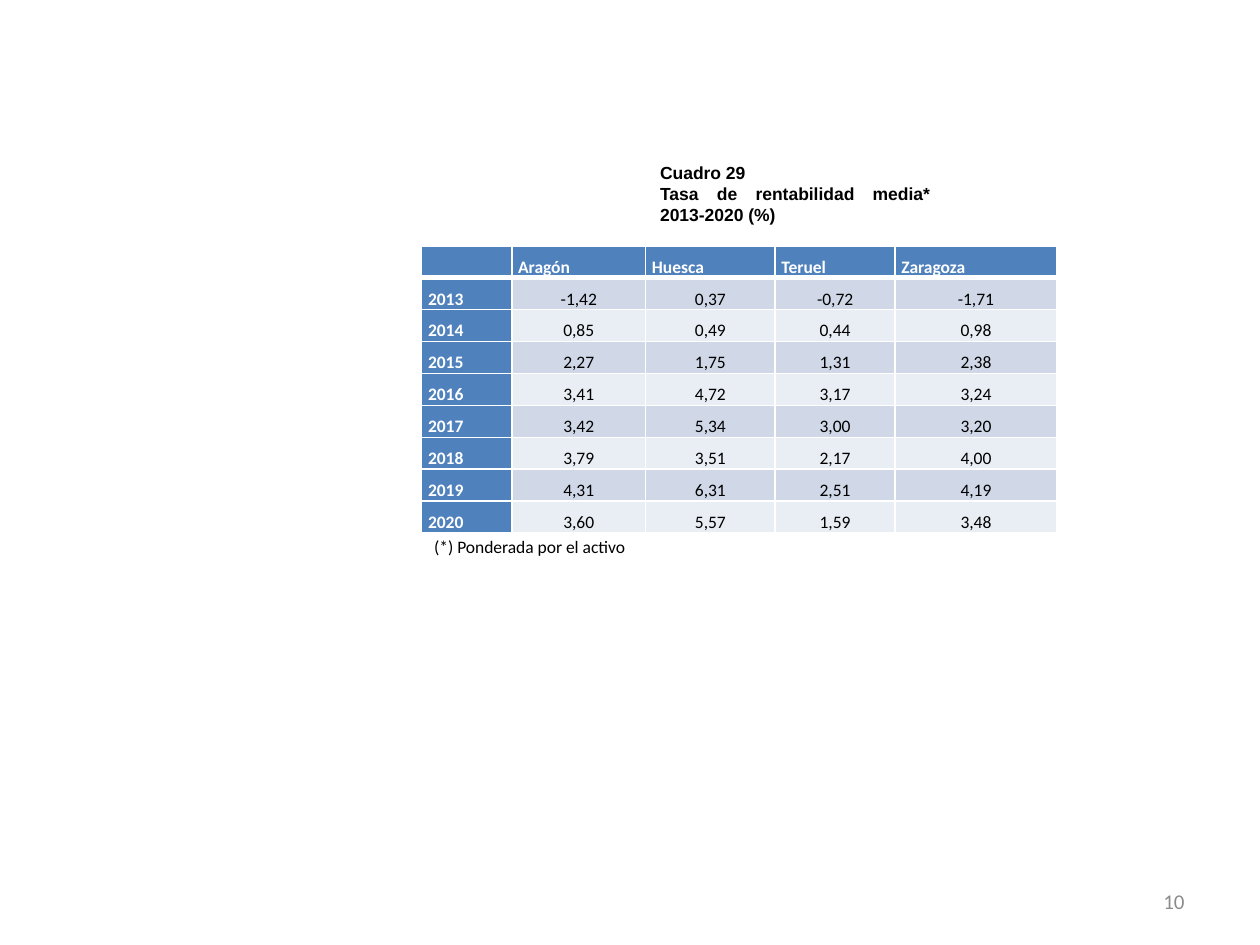
from lxml.etree import SubElement
from pptx import Presentation
from pptx.dml.color import RGBColor
from pptx.enum.text import MSO_ANCHOR, PP_ALIGN
from pptx.oxml.ns import qn
from pptx.util import Pt

HEADERS = ["", "Aragón", "Huesca", "Teruel", "Zaragoza"]
RATES = [
    ["2013", "-1,42", "0,37", "-0,72", "-1,71"],
    ["2014", "0,85", "0,49", "0,44", "0,98"],
    ["2015", "2,27", "1,75", "1,31", "2,38"],
    ["2016", "3,41", "4,72", "3,17", "3,24"],
    ["2017", "3,42", "5,34", "3,00", "3,20"],
    ["2018", "3,79", "3,51", "2,17", "4,00"],
    ["2019", "4,31", "6,31", "2,51", "4,19"],
    ["2020", "3,60", "5,57", "1,59", "3,48"],
]
COLUMN_WIDTHS = [51.5, 76.5, 74, 68.5, 92.5]
ROW_HEIGHT = 18


def rgb(color):
    return RGBColor.from_string(color)


class SlideBuilder:
    """Holds the style and the current slide, and adds each kind of element."""

    FONT = "Calibri"
    TITLE_FONT = "Arial"
    SIZE = 10
    TEXT = "000000"
    MUTED = "8C8C8C"
    WHITE = "FFFFFF"
    HEAD = "4F81BD"
    BANDS = ["D0D8E8", "E9EDF4"]

    def __init__(self, prs):
        self.slide = prs.slides.add_slide(prs.slide_layouts[5])

    def format(self, p, align, color=TEXT, size=SIZE, bold=False, font=FONT):
        p.alignment = align
        for r in p.runs:
            r.font.name = font
            r.font.size = Pt(size)
            r.font.bold = bold
            r.font.color.rgb = rgb(color)

    def title(self, text, left, top, width, height, first_indent):
        sp = self.slide.shapes.title
        sp.left, sp.top, sp.width, sp.height = map(Pt, (left, top, width, height))
        tf = sp.text_frame
        tf.text = text
        tf.vertical_anchor = MSO_ANCHOR.MIDDLE
        for p in tf.paragraphs:
            self.format(p, PP_ALIGN.JUSTIFY, bold=True, font=self.TITLE_FONT)
        pPr = tf.paragraphs[0]._p.get_or_add_pPr()
        pPr.set("marL", str(Pt(first_indent)))
        pPr.set("indent", "0")

    def text(self, text, left, top, width, height, align=PP_ALIGN.JUSTIFY,
             anchor=MSO_ANCHOR.TOP, wrap=True, **style):
        sp = self.slide.shapes.add_textbox(*map(Pt, (left, top, width, height)))
        tf = sp.text_frame
        tf.text = text
        tf.word_wrap = wrap
        tf.vertical_anchor = anchor
        self.format(tf.paragraphs[0], align, **style)

    def borders(self, cell, widths):
        tcPr = cell._tc.get_or_add_tcPr()
        for side, width in widths.items():
            ln = SubElement(tcPr, qn(f"a:ln{side}"), w=str(Pt(width)))
            fill = SubElement(ln, qn("a:solidFill"))
            SubElement(fill, qn("a:srgbClr"), val=self.WHITE)

    def cell(self, cell, text, row, col):
        head = row == 0 or col == 0
        cell.margin_left = cell.margin_right = Pt(3.6)
        cell.margin_top = cell.margin_bottom = 0
        cell.vertical_anchor = MSO_ANCHOR.BOTTOM if head else MSO_ANCHOR.MIDDLE
        self.borders(cell, {"L": 1, "R": 1, "T": 3 if row == 1 else 1,
                            "B": 3 if row == 0 else 1})
        cell.fill.solid()
        cell.fill.fore_color.rgb = rgb(self.HEAD if head else self.BANDS[(row - 1) % 2])
        p = cell.text_frame.paragraphs[0]
        p.text = text
        p.line_spacing = 1.5
        self.format(p, PP_ALIGN.JUSTIFY if head else PP_ALIGN.CENTER,
                    color=self.WHITE if head else self.TEXT, bold=head)
        if not text:
            SubElement(p._p, qn("a:endParaRPr"), sz=str(self.SIZE * 100))

    def table(self, rows, left, top, widths, row_height):
        size = (sum(widths), row_height * len(rows))
        frame = self.slide.shapes.add_table(
            len(rows), len(widths), *map(Pt, (left, top, *size)))
        table = frame.table
        for column, width in zip(table.columns, widths):
            column.width = Pt(width)
        for i, values in enumerate(rows):
            table.rows[i].height = Pt(row_height)
            for j, value in enumerate(values):
                self.cell(table.cell(i, j), value, i, j)


def main():
    prs = Presentation()
    prs.slide_width, prs.slide_height = Pt(720), Pt(540)
    s = SlideBuilder(prs)
    s.title("Cuadro 29\nTasa de rentabilidad media* 2013-2020 (%)",
            306, 95, 232.5, 31.5, first_indent=64)
    s.table([HEADERS] + RATES, 241, 140.5, COLUMN_WIDTHS, ROW_HEIGHT)
    s.text("(*) Ponderada por el activo", 241, 303, 125.5, 19.5, wrap=False)
    s.text("10", 516, 500.5, 168, 28.75, align=PP_ALIGN.RIGHT,
           anchor=MSO_ANCHOR.MIDDLE, color=s.MUTED, size=12)
    prs.save("out.pptx")


if __name__ == "__main__":
    main()
